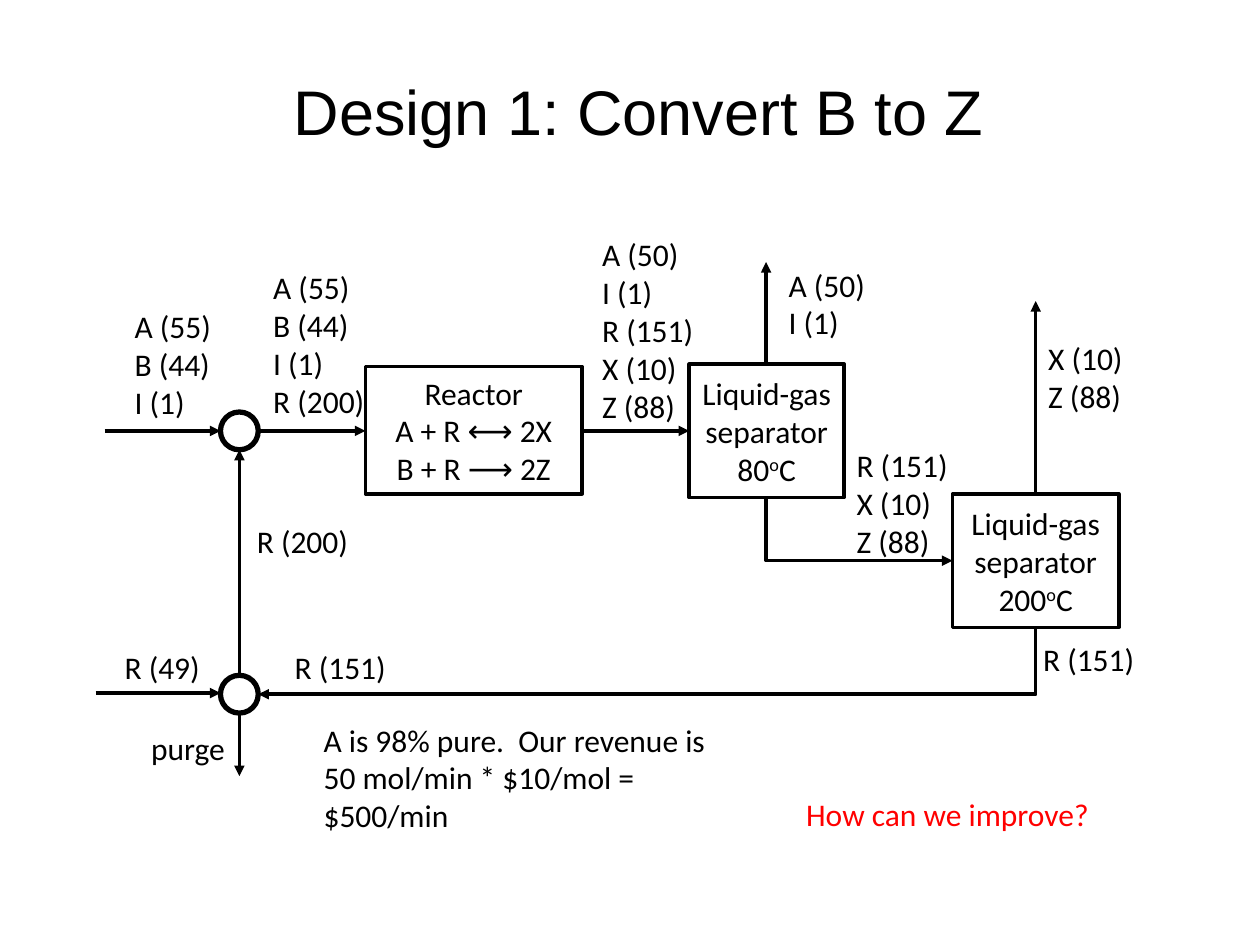
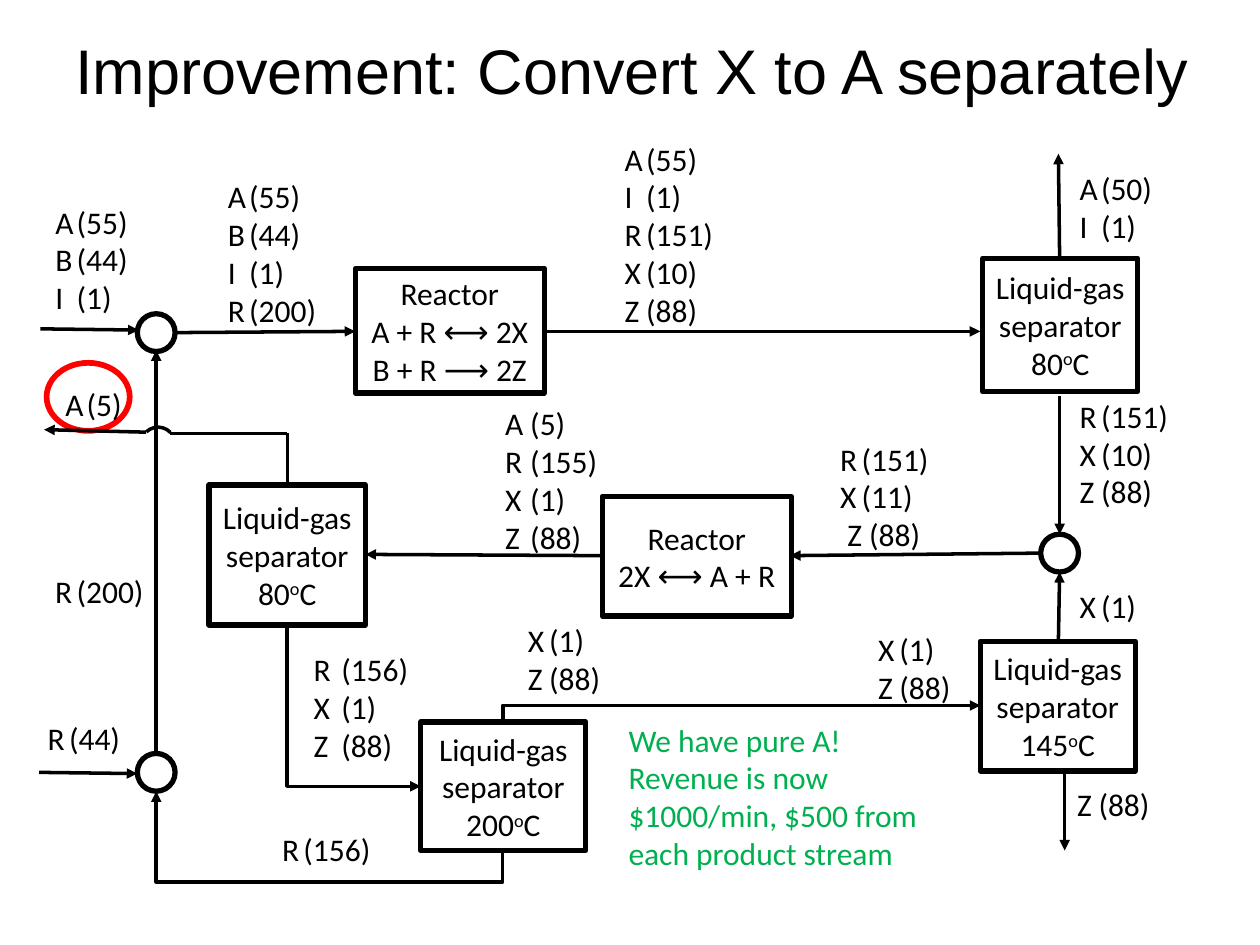
from dataclasses import dataclass
from functools import partial
from typing import Any, Optional

from lxml.etree import SubElement
from pptx import Presentation
from pptx.dml.color import RGBColor
from pptx.enum.shapes import MSO_CONNECTOR as CXN, MSO_SHAPE as SHAPE
from pptx.enum.text import MSO_ANCHOR as ANCHOR, PP_ALIGN as ALIGN
from pptx.oxml.ns import qn
from pptx.util import Inches, Pt


@dataclass(frozen=True)
class Theme:
    ink: str = "000000"
    alert: str = "FF0000"
    good: str = "00B050"
    title_font: str = "Arial"
    body_font: str = "Calibri"
    title_size: float = 36
    body_size: float = 18
    flow_line: float = 2
    ring_line: float = 3
    alert_line: float = 3.25


THEME = Theme()
NODE = 0.3
LINE_HEIGHT = 0.3
PADDING = 0.1


@dataclass(frozen=True)
class Title:
    x: float
    y: float
    w: float
    text: str
    h: float = 1.09


@dataclass(frozen=True)
class Unit:
    x: float
    y: float
    w: float
    h: float
    text: str
    line: float = THEME.flow_line


@dataclass(frozen=True)
class Flow:
    x1: float
    y1: float
    x2: float
    y2: float
    arrow: bool = True


@dataclass(frozen=True)
class Elbow:
    x1: float
    y1: float
    x2: float
    y2: float
    detour_y: Optional[float] = None


@dataclass(frozen=True)
class Stream:
    x: float
    y: float
    w: float
    content: str
    gap: float = 0


@dataclass(frozen=True)
class Note:
    x: float
    y: float
    w: float
    text: str
    lines: int = 1
    color: str = THEME.ink


@dataclass(frozen=True)
class Ring:
    x: float
    y: float
    w: float = NODE
    h: float = NODE
    line: float = THEME.ring_line
    color: str = THEME.ink
    shape: Any = SHAPE.OVAL
    rotation: float = 0


def assign(obj, **values) -> None:
    for name, value in values.items():
        setattr(obj, name, value)


def style_line(line, width: float, color: str = THEME.ink) -> None:
    line.width = Pt(width)
    line.color.rgb = RGBColor.from_string(color)


def write(p, text: str, size: float = THEME.body_size,
          font: str = THEME.body_font, color: str = THEME.ink) -> None:
    for i, part in enumerate(text.split("^")):
        r = p.add_run()
        r.text = part
        assign(r.font, name=font, size=Pt(size))
        r.font.color.rgb = RGBColor.from_string(color)
        if i % 2:
            r.font._element.set("baseline", "30000")


def paragraphs(tf, lines: list[str], **style) -> list:
    result = []
    for i, line in enumerate(lines):
        p = tf.add_paragraph() if i else tf.paragraphs[0]
        write(p, line, **style)
        result.append(p)
    return result


def text_box(s, x: float, y: float, w: float, h: float):
    tf = s.shapes.add_textbox(*map(Inches, (x, y, w, h))).text_frame
    tf.word_wrap = True
    return tf


def outline(s, shape, x: float, y: float, w: float, h: float,
            line: float, color: str = THEME.ink):
    sp = s.shapes.add_shape(shape, *map(Inches, (x, y, w, h)))
    sp.shadow.inherit = False
    sp.fill.background()
    style_line(sp.line, line, color)
    return sp


def connector(s, kind, x1: float, y1: float, x2: float, y2: float, arrow: bool):
    cxn = s.shapes.add_connector(kind, *map(Inches, (x1, y1, x2, y2)))
    style_line(cxn.line, THEME.flow_line)
    spPr = cxn._element.spPr
    if arrow:
        SubElement(spPr.find(qn("a:ln")), qn("a:tailEnd"), type="triangle")
    SubElement(spPr, qn("a:effectLst"))
    return spPr


def draw_title(s, t: Title) -> None:
    tf = text_box(s, t.x, t.y, t.w, t.h)
    tf.vertical_anchor = ANCHOR.MIDDLE
    p, = paragraphs(tf, [t.text], size=THEME.title_size, font=THEME.title_font)
    assign(p, alignment=ALIGN.CENTER, line_spacing=0.9)


def draw_unit(s, u: Unit) -> None:
    tf = outline(s, SHAPE.RECTANGLE, u.x, u.y, u.w, u.h, u.line).text_frame
    assign(tf, word_wrap=True, vertical_anchor=ANCHOR.MIDDLE,
           margin_left=Inches(0.05), margin_right=Inches(0.05))
    for p in paragraphs(tf, u.text.split("|")):
        p.alignment = ALIGN.CENTER


def draw_flow(s, f: Flow) -> None:
    connector(s, CXN.STRAIGHT, f.x1, f.y1, f.x2, f.y2, f.arrow)


def draw_elbow(s, e: Elbow) -> None:
    dx, dy = e.x2 - e.x1, e.y2 - e.y1
    w, h = abs(dy), abs(dx)
    left, top = (e.x1 + e.x2 - w) / 2, (e.y1 + e.y2 - h) / 2
    spPr = connector(s, CXN.ELBOW, left, top, left + w, top + h, True)
    assign(spPr.find(qn("a:xfrm")), rot=90, flipH=dy < 0, flipV=dx > 0)
    geom = spPr.find(qn("a:prstGeom"))
    if e.detour_y is None:
        geom.set("prst", "bentConnector2")
    else:
        share = round((e.detour_y - e.y1) / dy * 100000)
        SubElement(geom.find(qn("a:avLst")), qn("a:gd"),
                   name="adj1", fmla=f"val {share}")


def draw_stream(s, st: Stream) -> None:
    pairs = [item.rsplit(" ", 1) for item in st.content.split("|")]
    tf = text_box(s, st.x, st.y, st.w, PADDING + LINE_HEIGHT * len(pairs))
    sep = "\t" if st.gap else " "
    lines = [f"{species}{sep}({amount})" for species, amount in pairs]
    for p, line in zip(paragraphs(tf, lines), lines):
        if st.gap:
            stop = st.gap + (0.06 if line.startswith(" ") else 0)
            tabs = SubElement(p._p.get_or_add_pPr(), qn("a:tabLst"))
            SubElement(tabs, qn("a:tab"), pos=str(Inches(stop)), algn="l")


def draw_note(s, n: Note) -> None:
    tf = text_box(s, n.x, n.y, n.w, PADDING + LINE_HEIGHT * n.lines)
    paragraphs(tf, n.text.split("|"), color=n.color)


def draw_ring(s, r: Ring) -> None:
    sp = outline(s, r.shape, r.x, r.y, r.w, r.h, r.line, r.color)
    sp.rotation = r.rotation


DRAW = {Title: draw_title, Unit: draw_unit, Flow: draw_flow, Elbow: draw_elbow,
        Stream: draw_stream, Note: draw_note, Ring: draw_ring}

MAIN_REACTION = "Reactor|A + R ⟷ 2X|B + R ⟶ 2Z"
SEPARATOR = "Liquid-gas separator|{}^o^C".format
BoldUnit = partial(Unit, line=THEME.ring_line)
TabStream = partial(Stream, gap=0.17)

DESIGN = [
    Title(0.76, 0.37, 8.62, "Design 1: Convert B to Z"),
    Unit(2.9, 2.91, 1.72, 1.01, MAIN_REACTION),
    Unit(5.47, 2.89, 1.23, 1.06, SEPARATOR(80)),
    Unit(7.56, 3.92, 1.32, 1.06, SEPARATOR(200)),
    Ring(1.75, 3.27),
    Ring(1.75, 5.36),
    Elbow(6.08, 3.95, 7.56, 4.45),
    Elbow(8.22, 4.98, 2.05, 5.51),
    Flow(0.83, 3.42, 1.75, 3.42),
    Flow(2.05, 3.42, 2.9, 3.42),
    Flow(4.62, 3.42, 5.47, 3.42),
    Flow(6.08, 2.89, 6.08, 2.08),
    Flow(8.22, 3.92, 8.22, 2.39),
    Flow(1.9, 5.36, 1.9, 3.57),
    Flow(0.76, 5.5, 1.75, 5.5),
    Flow(1.9, 5.65, 1.9, 6.16),
    Stream(0.97, 2.39, 0.95, "A 55|B 44|I 1"),
    Stream(2.07, 2.08, 0.97, "A 55|B 44|I 1|R 200"),
    Stream(1.94, 4.09, 0.96, "R 200"),
    Stream(0.89, 5.09, 0.82, "R 49"),
    Stream(2.24, 5.09, 0.93, "R 151"),
    Stream(4.68, 1.82, 0.99, "A 50|I 1|R 151|X 10|Z 88"),
    Stream(6.16, 2.06, 0.81, "A 50|I 1"),
    Stream(6.7, 3.49, 0.93, "R 151|X 10|Z 88"),
    Stream(8.22, 2.64, 0.81, "X 10|Z 88"),
    Stream(8.18, 5.03, 1.01, "R 151"),
    Note(2.47, 5.67, 3.43, "A is 98% pure.  Our revenue is 50 mol/min * $10/mol = $500/min", 3),
    Note(6.3, 6.26, 3.43, "How can we improve?", color=THEME.alert),
    Note(1.1, 5.74, 0.82, "purge"),
]

IMPROVEMENT = [
    Title(0.42, 0.04, 9.19, "Improvement: Convert X to A separately"),
    BoldUnit(2.82, 2.13, 1.5, 0.99, MAIN_REACTION),
    BoldUnit(4.78, 3.94, 1.5, 0.95, "Reactor|2X ⟷ A + R"),
    BoldUnit(7.8, 2.05, 1.23, 1.06, SEPARATOR(80)),
    BoldUnit(1.66, 3.85, 1.24, 1.11, SEPARATOR(80)),
    BoldUnit(3.34, 5.73, 1.31, 1.02, SEPARATOR(200)),
    BoldUnit(7.78, 5.09, 1.23, 1.03, SEPARATOR(145)),
    Ring(1.09, 2.49),
    Ring(1.09, 5.98),
    Ring(8.26, 4.24),
    Ring(0.37, 2.88, 0.66, 0.54, THEME.alert_line, THEME.alert),
    Ring(1.12, 3.39, 0.27, 0.27, THEME.flow_line, shape=SHAPE.ARC, rotation=316.7),
    Flow(0.32, 2.61, 1.1, 2.62),
    Flow(1.39, 2.64, 2.82, 2.63),
    Flow(4.32, 2.63, 7.78, 2.63),
    Flow(8.41, 2.05, 8.4, 1.22),
    Flow(8.41, 3.14, 8.41, 4.24),
    Flow(8.4, 5.09, 8.41, 4.54),
    Flow(8.45, 6.11, 8.45, 6.75),
    Flow(8.26, 4.39, 6.27, 4.41),
    Flow(4.78, 4.41, 2.9, 4.4),
    Flow(2.28, 3.85, 2.28, 3.44, arrow=False),
    Flow(2.28, 3.44, 1.35, 3.44, arrow=False),
    Flow(1.16, 3.43, 0.35, 3.41),
    Flow(0.31, 6.13, 1.09, 6.14),
    Flow(1.24, 5.98, 1.24, 2.78),
    Elbow(2.28, 4.96, 3.34, 6.24),
    Elbow(3.99, 5.73, 7.78, 5.6),
    Elbow(3.99, 6.74, 1.24, 6.28, detour_y=7),
    TabStream(0.34, 1.56, 0.82, "A 55|B 44|I 1"),
    TabStream(1.71, 1.36, 0.94, "A 55|B 44|I 1|R 200"),
    TabStream(4.86, 1.06, 1.04, "A 55|I 1|R 151|X 10|Z 88"),
    TabStream(8.47, 1.29, 0.9, "A 50|I 1"),
    TabStream(8.47, 3.1, 1.02, "R 151|X 10|Z 88"),
    TabStream(8.47, 4.61, 0.73, "X 1"),
    TabStream(8.45, 6.18, 0.89, "Z 88"),
    TabStream(6.57, 3.44, 1.11, "R 151|X 11| Z 88"),
    TabStream(3.91, 3.16, 1.08, "A 5|R 155|X 1|Z 88", gap=0.2),
    TabStream(0.42, 3.01, 0.84, "A 5"),
    TabStream(2.39, 5.11, 0.99, "R 156|X 1|Z 88", gap=0.22),
    TabStream(4.09, 4.88, 0.79, "X 1|Z 88"),
    TabStream(6.87, 4.95, 0.79, "X 1|Z 88"),
    TabStream(2.14, 6.54, 1.07, "R 156"),
    TabStream(0.28, 5.66, 0.91, "R 44"),
    TabStream(0.34, 4.49, 0.93, "R 200"),
    Note(4.89, 5.67, 2.67, "We have pure A!|Revenue is now $1000/min, $500 from each product stream",
         4, THEME.good),
]


def main() -> None:
    prs = Presentation()
    assign(prs, slide_width=Inches(10), slide_height=Inches(7.5))
    for items in (DESIGN, IMPROVEMENT):
        s = prs.slides.add_slide(prs.slide_layouts[6])
        for item in items:
            DRAW[type(item)](s, item)
    prs.save("out.pptx")


if __name__ == "__main__":
    main()
